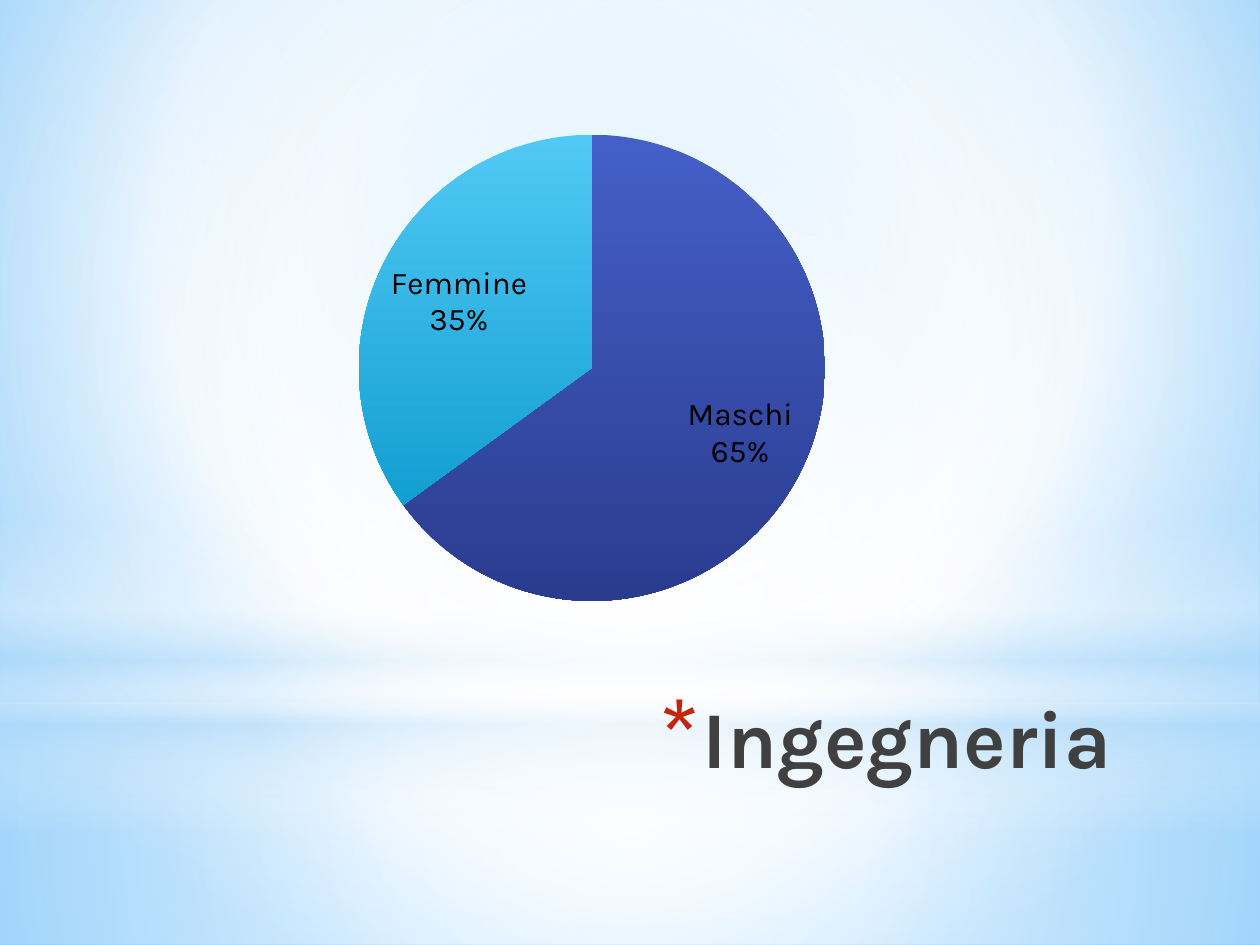
"""Build the Ingegneria slide with its pie of men and women."""
from lxml import etree
from pptx import Presentation
from pptx.chart.data import CategoryChartData
from pptx.dml.color import RGBColor as RGB
from pptx.enum.chart import XL_CHART_TYPE as Kind, XL_LABEL_POSITION as Spot
from pptx.enum.shapes import MSO_SHAPE as Form
from pptx.enum.text import MSO_ANCHOR as Anchor, PP_ALIGN as Align
from pptx.oxml import parse_xml
from pptx.oxml.ns import nsdecls, qn
from pptx.util import Inches, Pt

FONT = "Karla"
HUES = {
    "white": "FFFFFF", "pale": "B4DCFA", "sky": "9ED5FF", "blue": "5BB9FF",
    "text": "404040", "star": "C3260C", "black": "000000",
    "navy top": "445FC8", "navy end": "2A3C8E",
    "cyan top": "50C9F4", "cyan end": "139FD1",
}
MID = (50, 50, 50, 50)


def shade(node, stops, box=None):
    """Swap a solid fill for a radial gradient, or a downward one without box."""
    marks = "".join(
        f'<a:gs pos="{pos * 1000}"><a:srgbClr val="{HUES[hue]}">'
        f'<a:alpha val="{alpha * 1000}"/></a:srgbClr></a:gs>'
        for pos, hue, alpha in stops)
    way = '<a:lin ang="5400000" scaled="0"/>'
    if box:
        left, top, right, base = (n * 1000 for n in box)
        way = (f'<a:path path="circle"><a:fillToRect l="{left}" t="{top}" '
               f'r="{right}" b="{base}"/></a:path>')
    fill = parse_xml(f'<a:gradFill {nsdecls("a")} rotWithShape="1">'
                     f'<a:gsLst>{marks}</a:gsLst>{way}</a:gradFill>')
    node.replace(node.find(qn("a:solidFill")), fill)


deck = Presentation()
deck.slide_width, deck.slide_height = Inches(10), Inches(7.5)
slide = deck.slides.add_slide(deck.slide_layouts[6])

slide.background.fill.solid()
slide.background.fill.fore_color.rgb = RGB.from_string(HUES["white"])
shade(next(slide.element.iter(qn("p:bgPr"))),
      [(0, "sky", 100), (60, "white", 100), (100, "blue", 100)],
      (20, 10, 20, 60))

layers = [
    (Form.RECTANGLE, 5.58, 1.92, MID,
     [(0, "white", 91), (37, "white", 76), (100, "pale", 79)]),
    (Form.RECTANGLE, 0, 5.58, MID,
     [(0, "white", 89), (48, "white", 62), (100, "pale", 79)]),
    (Form.RECTANGLE, 4.12, 2.5, None,
     [(0, "white", 0), (29, "white", 30), (45, "pale", 40),
      (55, "white", 26), (65, "pale", 60), (100, "white", 0)]),
    (Form.OVAL, 1.75, 5.58, MID, [(0, "white", 100), (56, "white", 0)]),
]
for form, top, high, box, stops in layers:
    glow = slide.shapes.add_shape(
        form, Inches(0), Inches(top), Inches(10), Inches(high))
    glow.shadow.inherit = False
    glow.line.fill.background()
    glow.fill.solid()
    shade(glow.element.spPr, stops, box)

title = slide.shapes.add_textbox(
    Inches(1.96), Inches(5.41), Inches(7.12), Inches(1.25))
frame = title.text_frame
frame.word_wrap = True
frame.vertical_anchor = Anchor.TOP
para = frame.paragraphs[0]
para.alignment = Align.RIGHT
run = para.add_run()
run.text = "Ingegneria "
run.font.name, run.font.size, run.font.bold = FONT, Pt(46), True
run.font.color.rgb = RGB.from_string(HUES["text"])
props = para._p.get_or_add_pPr()
props.set("marL", str(Inches(0.35)))
props.set("indent", str(Inches(-0.35)))
tint = etree.SubElement(props, qn("a:buClr"))
etree.SubElement(tint, qn("a:srgbClr"), val=HUES["star"])
etree.SubElement(props, qn("a:buSzPct"), val="128000")
etree.SubElement(props, qn("a:buFont"), typeface=FONT)
etree.SubElement(props, qn("a:buChar"), char="*")

data = CategoryChartData()
data.categories = ["Maschi", "Femmine"]
data.add_series("Series 1", [65, 35])
chart = slide.shapes.add_chart(
    Kind.PIE, Inches(0.85), Inches(0.8), Inches(7.4), Inches(4.24), data).chart
chart.has_title = chart.has_legend = False
chart.font.name, chart.font.size = FONT, Pt(18)
chart.font.color.rgb = RGB.from_string(HUES["black"])

plot = chart.plots[0]
plot.vary_by_categories = True
plot.has_data_labels = True
labels = plot.data_labels
labels.show_category_name = labels.show_percentage = True
labels.show_value = False
labels.number_format, labels.number_format_is_linked = "0%", False
labels.position = Spot.INSIDE_END
gap = parse_xml(f'<c:separator {nsdecls("c")}>\n</c:separator>')
next(plot._element.iter(qn("c:showBubbleSize"))).addnext(gap)

for num, hue in enumerate(["navy", "cyan"]):
    slice_ = plot.series[0].points[num].format
    slice_.line.fill.background()
    slice_.fill.solid()
    slice_.fill.fore_color.rgb = RGB.from_string(HUES[hue + " top"])
for point, hue in zip(chart.element.iter(qn("c:dPt")), ["navy", "cyan"]):
    shade(point.find(qn("c:spPr")),
          [(0, hue + " top", 100), (100, hue + " end", 100)])

area = next(chart.element.iter(qn("c:plotArea")))
for old in area.findall(qn("c:layout")):
    area.remove(old)
layout = etree.Element(qn("c:layout"))
area.insert(0, layout)
place = etree.SubElement(layout, qn("c:manualLayout"))
for key, val in [("layoutTarget", "inner"), ("xMode", "edge"),
                 ("yMode", "edge"), ("x", "0.27"), ("y", "0.06"),
                 ("w", "0.5"), ("h", "0.88")]:
    etree.SubElement(place, qn("c:" + key), val=val)

deck.save("out.pptx")
